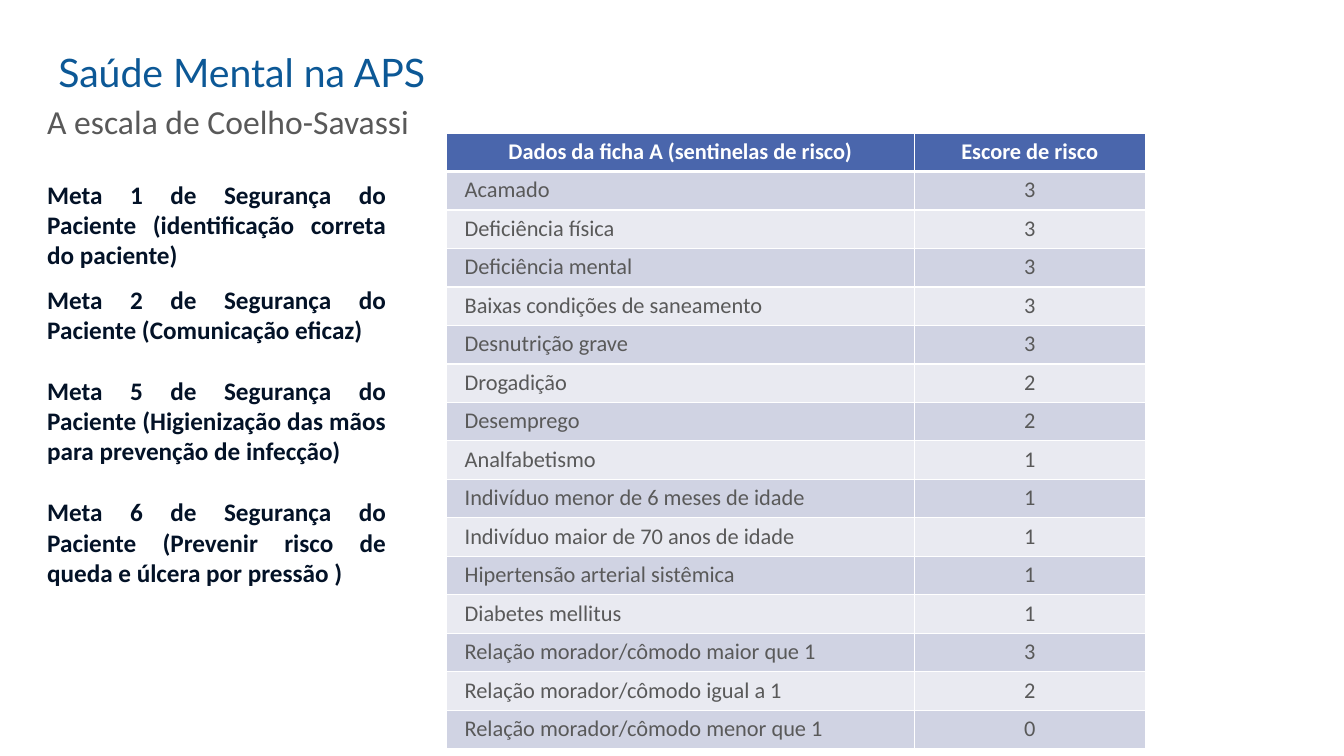
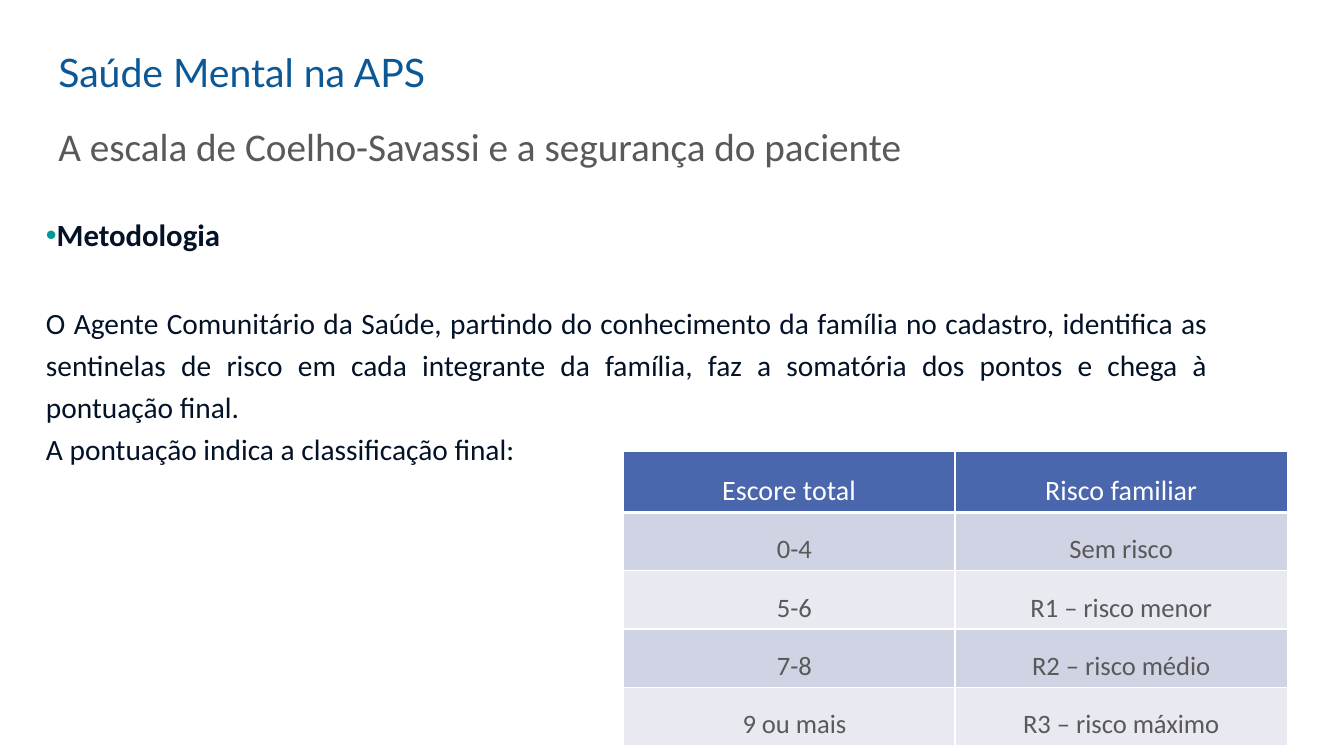
from pptx import Presentation
from pptx.dml.color import RGBColor
from pptx.enum.text import MSO_ANCHOR, PP_ALIGN
from pptx.util import Cm, Pt
from lxml.etree import SubElement
from pptx.oxml.ns import qn

TITLE_BLUE = RGBColor(0x0C, 0x58, 0x96)
GRAY = RGBColor(0x59, 0x59, 0x59)
NAVY = RGBColor(0x03, 0x12, 0x27)
WHITE = RGBColor(0xFF, 0xFF, 0xFF)
HEADER_BLUE = RGBColor(0x4A, 0x66, 0xAC)
BANDS = (RGBColor(0xD0, 0xD3, 0xE3), RGBColor(0xE9, 0xEA, 0xF1))
BULLET_TEAL = RGBColor(0x00, 0x99, 0x99)

TITLE_FONT = "Lato"
BODY_FONT = "Calibri"


class Deck:
    """Shared style and the slide being filled."""

    def __init__(self):
        self.prs = Presentation()
        self.prs.slide_width, self.prs.slide_height = Cm(33.87), Cm(19.05)
        self.slide = None

    def new_slide(self):
        self.slide = self.prs.slides.add_slide(self.prs.slide_layouts[6])
        title = self.text_frame(1.22, 1.09, 17.98, 1.45)
        self.set_text(title.paragraphs[0], "Saúde Mental na APS", 28,
                      TITLE_BLUE, font=TITLE_FONT)

    def text_frame(self, left, top, width, height):
        box = self.slide.shapes.add_textbox(Cm(left), Cm(top), Cm(width), Cm(height))
        box.text_frame.word_wrap = True
        return box.text_frame

    def set_text(self, paragraph, text, size, color, bold=False, font=BODY_FONT,
                 align=PP_ALIGN.LEFT, spacing=1.0, before=0):
        paragraph.text = text
        paragraph.alignment = align
        paragraph.line_spacing = spacing
        paragraph.space_before = Pt(before)
        paragraph.font.name = font
        paragraph.font.size = Pt(size)
        paragraph.font.bold = bold
        paragraph.font.color.rgb = color

    def subtitle(self, text, left, top, size):
        frame = self.text_frame(left, top, 27.91, 2.03)
        self.set_text(frame.paragraphs[0], text, size, GRAY, spacing=0.9)

    def body(self, left, top, width, height, items, spacing=1.0):
        """Justified text; items are (text, size, bold, space before)."""
        frame = self.text_frame(left, top, width, height)
        for index, (text, size, bold, before) in enumerate(items):
            paragraph = frame.add_paragraph() if index else frame.paragraphs[0]
            self.set_text(paragraph, text, size, NAVY, bold,
                          align=PP_ALIGN.JUSTIFY, spacing=spacing, before=before)
        return frame

    def bullet(self, paragraph):
        props = paragraph._p.get_or_add_pPr()
        props.set("marL", "0")
        props.set("indent", str(-Cm(0.64)))
        bullet_color = SubElement(props, qn("a:buClr"))
        SubElement(bullet_color, qn("a:srgbClr")).set("val", str(BULLET_TEAL))
        SubElement(props, qn("a:buFont")).set("typeface", "Arial")
        SubElement(props, qn("a:buChar")).set("char", "•")
        # Default run properties come after the bullet
        defaults = props.find(qn("a:defRPr"))
        if defaults is not None:
            props.append(defaults)

    def cell_borders(self, cell, bottom):
        props = cell._tc.get_or_add_tcPr()
        for side, width in (("L", 1), ("R", 1), ("T", 1), ("B", bottom)):
            line = SubElement(props, qn(f"a:ln{side}"), w=str(Pt(width)))
            fill = SubElement(line, qn("a:solidFill"))
            SubElement(fill, qn("a:srgbClr")).set("val", str(WHITE))

    def table(self, left, top, widths, heights, rows, sizes, header_bold,
              first_align, spacing=1.0):
        """Header row plus banded rows; sizes are (header, body)."""
        table = self.slide.shapes.add_table(
            len(rows), len(widths), Cm(left), Cm(top),
            Cm(sum(widths)), Cm(sum(heights))).table
        table.first_row = table.horz_banding = False
        for column, width in zip(table.columns, widths):
            column.width = Cm(width)
        for r, (values, height) in enumerate(zip(rows, heights)):
            header = r == 0
            table.rows[r].height = Cm(height)
            for c, value in enumerate(values):
                cell = table.cell(r, c)
                first_body = c == 0 and not header
                self.cell_borders(cell, 3 if header else 1)
                cell.fill.solid()
                cell.fill.fore_color.rgb = HEADER_BLUE if header else BANDS[(r - 1) % 2]
                cell.margin_left = Cm(0.46 if first_body else 0.19)
                cell.margin_right = Cm(0.19)
                cell.margin_top = cell.margin_bottom = Cm(0.13)
                cell.vertical_anchor = MSO_ANCHOR.MIDDLE if header else MSO_ANCHOR.TOP
                self.set_text(cell.text_frame.paragraphs[0], value,
                              sizes[0] if header else sizes[1],
                              WHITE if header else GRAY,
                              bold=header and header_bold,
                              align=first_align if first_body else PP_ALIGN.CENTER,
                              spacing=spacing)


RISK_SENTINELS = [
    ("Dados da ficha A (sentinelas de risco)", "Escore de risco"),
    ("Acamado", "3"),
    ("Deficiência física", "3"),
    ("Deficiência mental", "3"),
    ("Baixas condições de saneamento", "3"),
    ("Desnutrição grave", "3"),
    ("Drogadição", "2"),
    ("Desemprego", "2"),
    ("Analfabetismo", "1"),
    ("Indivíduo menor de 6 meses de idade", "1"),
    ("Indivíduo maior de 70 anos de idade", "1"),
    ("Hipertensão arterial sistêmica", "1"),
    ("Diabetes mellitus", "1"),
    ("Relação morador/cômodo maior que 1", "3"),
    ("Relação morador/cômodo igual a 1", "2"),
    ("Relação morador/cômodo menor que 1", "0"),
]

SAFETY_GOALS = [
    ("Meta 1 de Segurança do Paciente (identificação correta do paciente)", 18, True, 0),
    ("Meta 2 de Segurança do Paciente (Comunicação eficaz)", 18, True, 10),
    ("Meta 5 de Segurança do Paciente (Higienização das mãos para prevenção "
     "de infecção)", 18, True, 22),
    ("Meta 6 de Segurança do Paciente (Prevenir risco de queda e úlcera por "
     "pressão )", 18, True, 22),
]

METHOD = [
    ("Metodologia", 22, True, 0),
    ("O Agente Comunitário da Saúde, partindo do conhecimento da família no "
     "cadastro, identifica as sentinelas de risco em cada integrante da família, "
     "faz a somatória dos pontos e chega à pontuação final.", 21, False, 32),
    ("A pontuação indica a classificação final:", 21, False, 0),
]

FAMILY_RISK = [
    ("Escore total", "Risco familiar"),
    ("0-4", "Sem risco"),
    ("5-6", "R1 – risco menor"),
    ("7-8", "R2 – risco médio"),
    ("9 ou mais", "R3 – risco máximo"),
]


def main():
    deck = Deck()

    # Scale and safety goals
    deck.new_slide()
    deck.subtitle("A escala de Coelho-Savassi", 0.94, 2.54, 24)
    deck.table(11.25, 3.35, (11.79, 5.82), [0.97] * len(RISK_SENTINELS),
               RISK_SENTINELS, (16, 16), True, PP_ALIGN.LEFT)
    deck.body(0.94, 4.39, 9.04, 10.62, SAFETY_GOALS)

    # Method and final classification
    deck.new_slide()
    deck.subtitle("A escala de Coelho-Savassi e a segurança do paciente", 1.22, 3.1, 28)
    method = deck.body(0.91, 5.13, 29.77, 12.5, METHOD, spacing=1.2)
    deck.bullet(method.paragraphs[0])
    deck.table(15.7, 11.38, (8.37, 8.37), [1.52] + [1.47] * (len(FAMILY_RISK) - 1),
               FAMILY_RISK, (20, 19), False, PP_ALIGN.CENTER, spacing=1.5)

    deck.prs.save("out.pptx")


if __name__ == "__main__":
    main()
